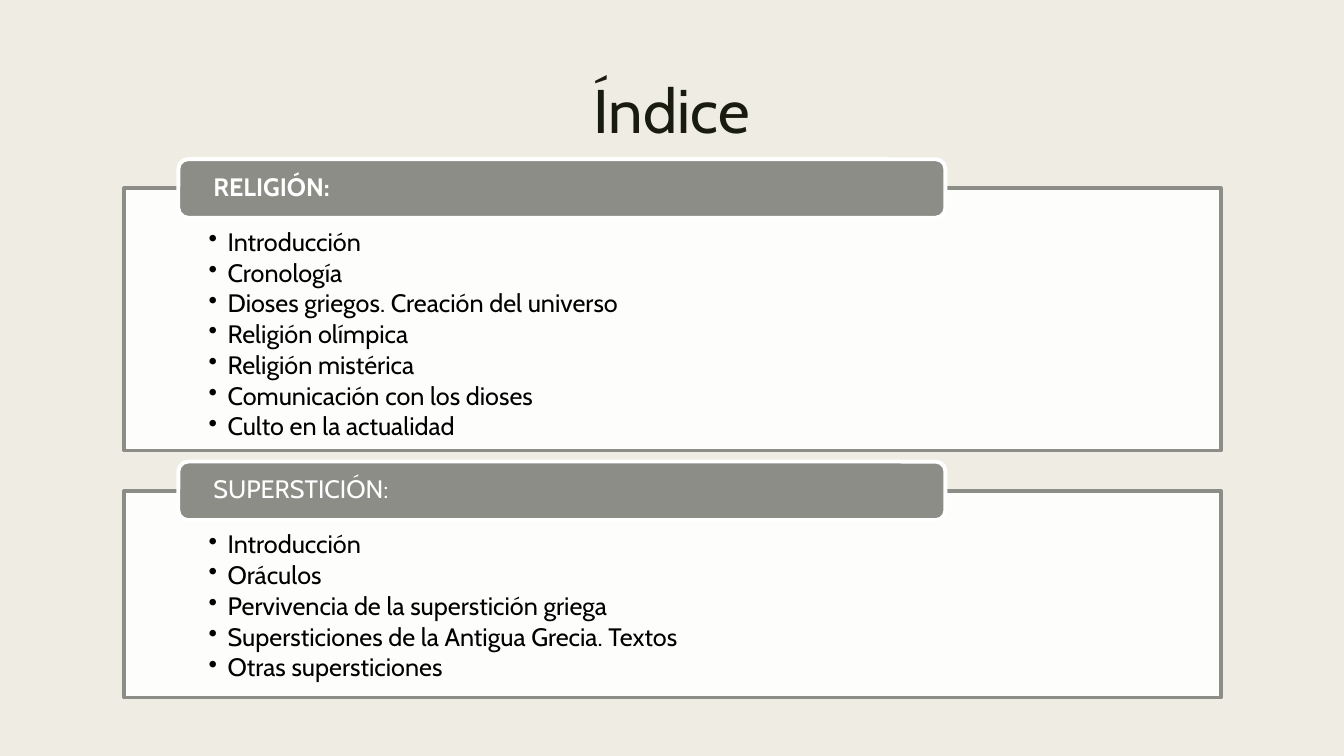
from lxml import etree
from pptx import Presentation
from pptx.dml.color import RGBColor
from pptx.enum.shapes import MSO_SHAPE
from pptx.enum.text import MSO_ANCHOR, PP_ALIGN
from pptx.oxml.ns import qn
from pptx.util import Pt

RECTANGLE = MSO_SHAPE.RECTANGLE
ROUNDED = MSO_SHAPE.ROUNDED_RECTANGLE
TOP, MIDDLE = MSO_ANCHOR.TOP, MSO_ANCHOR.MIDDLE
LEFT, CENTER = PP_ALIGN.LEFT, PP_ALIGN.CENTER

FONT = "Cabin"
CREAM, INK, GREY, WHITE, BLACK = "EFEDE3", "191B0E", "8C8D86", "FFFFFF", "000000"

PANEL_LEFT, PANEL_WIDTH = 88.6, 783.4
TAG_LEFT, TAG_WIDTH, TAG_HEIGHT = 127.4, 547.9, 41.8
BULLET_INDENT = 13.5

# Heading, bold heading, panel top, panel height, entries
SECTIONS = [
    ("RELIGIÓN:", True, 134.6, 187.2, [
        "Introducción",
        "Cronología",
        "Dioses griegos. Creación del universo",
        "Religión olímpica",
        "Religión mistérica",
        "Comunicación con los dioses",
        "Culto en la actualidad",
    ]),
    ("SUPERSTICIÓN:", False, 350.6, 147.6, [
        "Introducción",
        "Oráculos",
        "Pervivencia de la superstición griega",
        "Supersticiones de la Antigua Grecia. Textos",
        "Otras supersticiones",
    ]),
]


def color(value):
    return RGBColor.from_string(value)


def set_frame(box, anchor, side, top, bottom):
    frame = box.text_frame
    frame.word_wrap = True
    frame.vertical_anchor = anchor
    frame.margin_left = frame.margin_right = Pt(side)
    frame.margin_top, frame.margin_bottom = Pt(top), Pt(bottom)
    return frame


def style_paragraph(para, text, size, ink, align=LEFT, bold=False, spacing=0.9):
    para.text = text
    para.alignment = align
    para.line_spacing = spacing
    para.font.name = FONT
    para.font.size = Pt(size)
    para.font.bold = bold
    para.font.color.rgb = color(ink)


def add_bullet(para):
    properties = para._p.get_or_add_pPr()
    properties.set("marL", str(Pt(BULLET_INDENT)))
    properties.set("indent", str(-Pt(BULLET_INDENT)))
    etree.SubElement(properties, qn("a:buChar")).set("char", "•")


def add_block(page, kind, left, top, width, height, fill, line):
    block = page.shapes.add_shape(kind, Pt(left), Pt(top), Pt(width), Pt(height))
    block.shadow.inherit = False
    block.fill.solid()
    block.fill.fore_color.rgb = color(fill)
    block.line.color.rgb = color(line)
    block.line.width = Pt(2.75)
    return block


def set_opacity(shape, percent):
    tint = shape._element.spPr.find(qn("a:solidFill"))[0]
    etree.SubElement(tint, qn("a:alpha")).set("val", str(percent * 1000))


def add_title(page, text):
    box = page.shapes.add_textbox(Pt(50.4), Pt(54), Pt(859), Pt(116.6))
    frame = set_frame(box, TOP, 7.2, 3.6, 3.6)
    style_paragraph(frame.paragraphs[0], text, 44, INK, CENTER, spacing=0.89)


def add_panel(page, top, height, entries):
    panel = add_block(page, RECTANGLE, PANEL_LEFT, top, PANEL_WIDTH, height, WHITE, GREY)
    set_opacity(panel, 90)
    frame = set_frame(panel, TOP, 60.5, 29.5, 10)
    for index, entry in enumerate(entries):
        para = frame.add_paragraph() if index else frame.paragraphs[0]
        add_bullet(para)
        style_paragraph(para, entry, 18, BLACK)
        para.space_after = Pt(2.5)


def add_tag(page, panel_top, heading, bold):
    # The tag straddles the panel's top edge
    top = panel_top - TAG_HEIGHT / 2
    tag = add_block(page, ROUNDED, TAG_LEFT, top, TAG_WIDTH, TAG_HEIGHT, GREY, WHITE)
    frame = set_frame(tag, MIDDLE, 23, 0, 0)
    style_paragraph(frame.paragraphs[0], heading, 18, WHITE, bold=bold)


def main():
    deck = Presentation()
    deck.slide_width, deck.slide_height = Pt(960), Pt(540)
    page = deck.slides.add_slide(deck.slide_layouts[6])

    # Background and title
    page.background.fill.solid()
    page.background.fill.fore_color.rgb = color(CREAM)
    add_title(page, "Índice")

    # Sections: a panel of entries under a heading tag
    for heading, bold, top, height, entries in SECTIONS:
        add_panel(page, top, height, entries)
        add_tag(page, top, heading, bold)

    deck.save("out.pptx")


if __name__ == "__main__":
    main()
